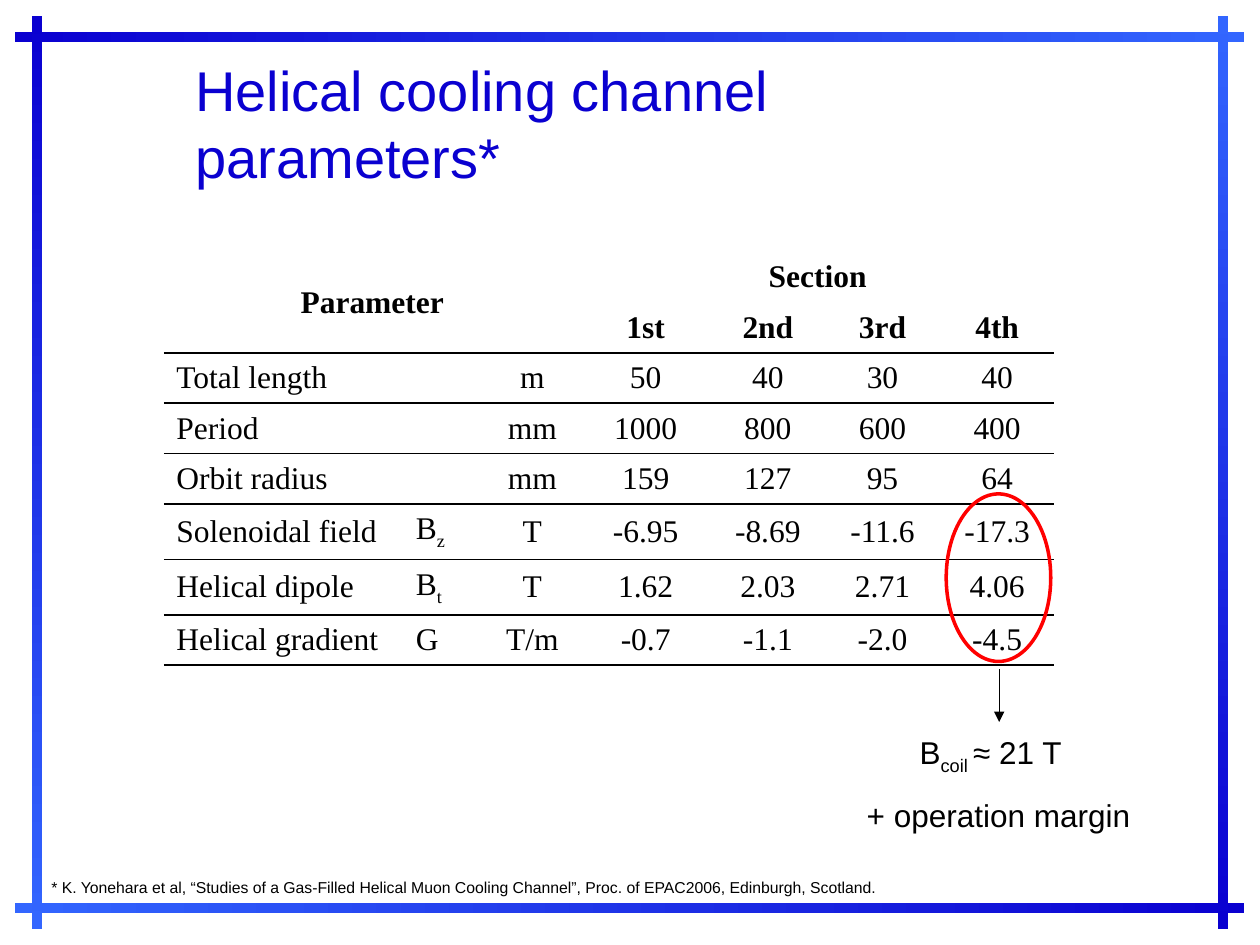
from pptx import Presentation
from pptx.dml.color import RGBColor
from pptx.enum.shapes import MSO_CONNECTOR, MSO_SHAPE
from pptx.enum.text import MSO_ANCHOR, MSO_AUTO_SIZE, PP_ALIGN
from pptx.oxml import parse_xml
from pptx.oxml.ns import nsdecls, qn
from pptx.util import Inches, Pt
from lxml.etree import SubElement

NAVY = RGBColor(0x0A, 0x00, 0xD0)
SKY = RGBColor(0x33, 0x66, 0xFF)
BLACK = RGBColor(0x00, 0x00, 0x00)
RED = RGBColor(0xFF, 0x00, 0x00)
NO_STYLE_NO_GRID = "{2D5ABB26-0587-4C30-8999-92F81FD0307C}"
BAR_THICKNESS = 0.08

FRAME_BARS = [
    (0.12, 7.17, 9.75, 0, SKY, NAVY),
    (0.12, 0.25, 9.75, 0, NAVY, SKY),
    (-3.33, 3.71, 7.25, 90, NAVY, SKY),
    (6.08, 3.71, 7.25, 270, NAVY, SKY),
]
COLUMN_WIDTHS = [1.9, 0.64, 0.77, 1.03, 0.91, 0.91, 0.91]
ROW_HEIGHTS = [0.4, 0.4, 0.4, 0.4, 0.4, 0.44, 0.44, 0.4]
HEADER_ROWS = 2
TABLE_ROWS = [
    ["Parameter", "", "", "Section", "", "", ""],
    ["", "", "", "1st", "2nd", "3rd", "4th"],
    ["Total length", "", "m", "50", "40", "30", "40"],
    ["Period", "", "mm", "1000", "800", "600", "400"],
    ["Orbit radius", "", "mm", "159", "127", "95", "64"],
    ["Solenoidal field", "B_z_", "T", "-6.95", "-8.69", "-11.6", "-17.3"],
    ["Helical dipole", "B_t_", "T", "1.62", "2.03", "2.71", "4.06"],
    ["Helical gradient", "G", "T/m", "-0.7", "-1.1", "-2.0", "-4.5"],
]


def write_text(frame, text, size=18, font="Arial", color=BLACK, bold=False,
               align=PP_ALIGN.LEFT):
    para = frame.paragraphs[0]
    para.alignment = align
    for index, part in enumerate(text.split("_")):
        if not part:
            continue
        span = para.add_run()
        span.text = part
        span.font.size = Pt(size)
        span.font.name = font
        span.font.bold = bold
        span.font.color.rgb = color
        if index % 2:
            span.font._element.set("baseline", "-25000")


def add_label(page, left, top, width, height, text, wrap=False, **style):
    box = page.shapes.add_textbox(Inches(left), Inches(top), Inches(width), Inches(height))
    box.text_frame.word_wrap = wrap
    write_text(box.text_frame, text, **style)


def add_frame_bar(page, left, top, length, rotation, start, end):
    bar = page.shapes.add_shape(MSO_SHAPE.RECTANGLE, Inches(left), Inches(top),
                                Inches(length), Inches(BAR_THICKNESS))
    bar.rotation = rotation
    bar.shadow.inherit = False
    bar.line.fill.background()
    bar.fill.gradient()
    bar.fill.gradient_angle = 0
    for stop, color in zip(bar.fill.gradient_stops, (start, end)):
        stop.color.rgb = color


def set_title(page, text):
    title = page.shapes.title
    title.left, title.top = Inches(1.45), Inches(0.39)
    title.width, title.height = Inches(7.28), Inches(0.63)
    frame = title.text_frame
    frame.word_wrap = True
    frame.auto_size = MSO_AUTO_SIZE.NONE
    frame.vertical_anchor = MSO_ANCHOR.TOP
    frame.margin_right = Inches(0.3)
    write_text(frame, text, size=32, color=NAVY)


def rule_cell(cell):
    for side in ("lnT", "lnB"):
        cell._tc.get_or_add_tcPr().append(parse_xml(
            f'<a:{side} {nsdecls("a")} w="12700"><a:solidFill>'
            f'<a:srgbClr val="{BLACK}"/></a:solidFill></a:{side}>'))


def add_parameter_table(page):
    table = page.shapes.add_table(
        len(ROW_HEIGHTS), len(COLUMN_WIDTHS), Inches(1.3), Inches(2),
        Inches(sum(COLUMN_WIDTHS)), Inches(sum(ROW_HEIGHTS))).table
    table.first_row = table.horz_banding = False
    table._tbl.tblPr.find(qn("a:tableStyleId")).text = NO_STYLE_NO_GRID
    for column, width in zip(table.columns, COLUMN_WIDTHS):
        column.width = Inches(width)
    for row, height in zip(table.rows, ROW_HEIGHTS):
        row.height = Inches(height)
    table.cell(0, 0).merge(table.cell(1, 2))
    table.cell(0, 3).merge(table.cell(0, 6))
    for row_index, values in enumerate(TABLE_ROWS):
        header = row_index < HEADER_ROWS
        for column_index, value in enumerate(values):
            cell = table.cell(row_index, column_index)
            cell.vertical_anchor = MSO_ANCHOR.MIDDLE
            cell.margin_top = cell.margin_bottom = 0
            if not header:
                rule_cell(cell)
            cell.fill.background()
            centered = header or column_index > 1
            write_text(cell.text_frame, value, font="Times New Roman", bold=header,
                       align=PP_ALIGN.CENTER if centered else PP_ALIGN.LEFT)


def add_ring(page, left, top, width, height):
    ring = page.shapes.add_shape(MSO_SHAPE.OVAL, Inches(left), Inches(top),
                                 Inches(width), Inches(height))
    ring.shadow.inherit = False
    ring.fill.background()
    ring.line.color.rgb = RED
    ring.line.width = Pt(2)


def add_down_arrow(page, x, top, bottom):
    arrow = page.shapes.add_connector(MSO_CONNECTOR.STRAIGHT, Inches(x), Inches(top),
                                      Inches(x), Inches(bottom))
    arrow.line.color.rgb = BLACK
    arrow.line.width = Pt(0.75)
    SubElement(arrow.line._get_or_add_ln(), qn("a:tailEnd"), type="triangle")
    SubElement(arrow._element.spPr, qn("a:effectLst"))


def main():
    deck = Presentation()
    deck.slide_width, deck.slide_height = Inches(10), Inches(7.5)
    page = deck.slides.add_slide(deck.slide_layouts[5])
    for bar in FRAME_BARS:
        add_frame_bar(page, *bar)
    set_title(page, "Helical cooling channel parameters*")
    add_down_arrow(page, 7.93, 5.31, 5.73)
    add_label(page, 7.2, 5.77, 1.46, 0.4, "B_coil _≈ 21 T")
    add_label(page, 6.78, 6.27, 2.29, 0.4, "+ operation margin")
    add_parameter_table(page)
    add_ring(page, 7.51, 3.92, 0.83, 1.33)
    add_label(page, 0.31, 6.92, 7.1, 0.25,
              "* K. Yonehara et al, “Studies of a Gas-Filled Helical Muon Cooling Channel”, "
              "Proc. of EPAC2006, Edinburgh, Scotland.", wrap=True, size=9)
    deck.save("out.pptx")


if __name__ == "__main__":
    main()
